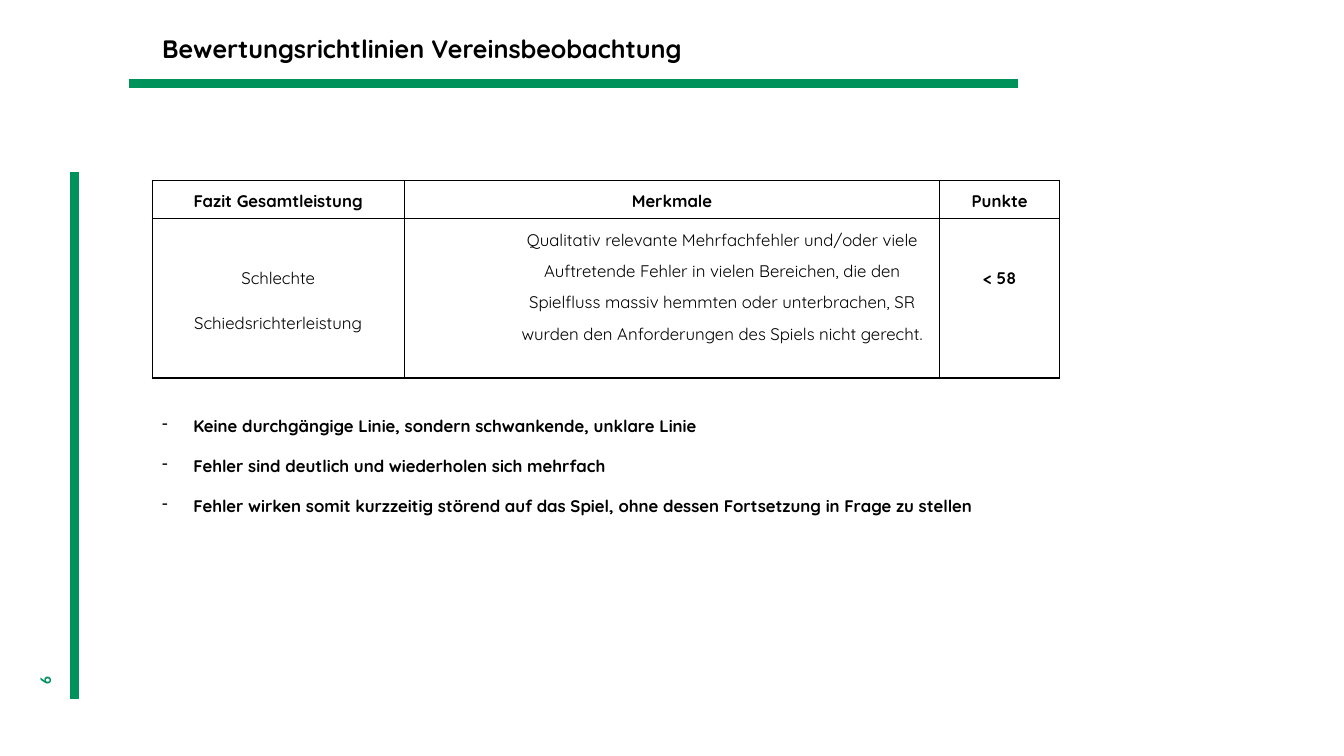
from lxml import etree
from pptx import Presentation
from pptx.dml.color import RGBColor
from pptx.enum.shapes import MSO_CONNECTOR
from pptx.enum.text import MSO_ANCHOR, PP_ALIGN
from pptx.oxml.ns import qn
from pptx.util import Inches, Pt

STRAIGHT = MSO_CONNECTOR.STRAIGHT
TOP, MIDDLE = MSO_ANCHOR.TOP, MSO_ANCHOR.MIDDLE
LEFT, CENTER, RIGHT = PP_ALIGN.LEFT, PP_ALIGN.CENTER, PP_ALIGN.RIGHT
COLORS = {"green": "00925B", "black": "000000"}


class GuidelineSlide:
    """Holds the style and the current slide and draws its elements."""

    font = "Quicksand"

    def __init__(self, slide):
        self.slide = slide

    def style(self, paragraph, size=12, bold=True, color="black", font=None,
              align=LEFT, spacing=1.0):
        paragraph.alignment = align
        paragraph.line_spacing = spacing
        paragraph.font.name = font or self.font
        paragraph.font.size = Pt(size)
        paragraph.font.bold = bold
        paragraph.font.color.rgb = RGBColor.from_string(COLORS[color])

    def bar(self, x1, y1, x2, y2):
        bar = self.slide.shapes.add_connector(
            STRAIGHT, Inches(x1), Inches(y1), Inches(x2), Inches(y2))
        bar.line.color.rgb = RGBColor.from_string(COLORS["green"])
        bar.line.width = Pt(6)
        etree.SubElement(bar.element.spPr, qn("a:effectLst"))

    def text(self, lines, left, top, width, height, anchor=MIDDLE,
             rotation=0, bullet=None, **style):
        box = self.slide.shapes.add_textbox(
            Inches(left), Inches(top), Inches(width), Inches(height))
        box.rotation = rotation
        frame = box.text_frame
        frame.word_wrap = True
        frame.vertical_anchor = anchor
        frame.text = "\n".join(lines)
        for paragraph in frame.paragraphs:
            if bullet:
                properties = paragraph._p.get_or_add_pPr()
                properties.set("marL", str(Inches(0.31)))
                properties.set("indent", str(-Inches(0.31)))
                etree.SubElement(properties, qn("a:buChar"), char=bullet)
            self.style(paragraph, **style)

    def border(self, cell):
        properties = cell._tc.get_or_add_tcPr()
        for position, side in enumerate(("lnL", "lnR", "lnT", "lnB")):
            line = etree.Element(qn(f"a:{side}"), w=str(Pt(1)))
            fill = etree.SubElement(line, qn("a:solidFill"))
            etree.SubElement(fill, qn("a:srgbClr"), val=COLORS["black"])
            properties.insert(position, line)

    def cell(self, cell, text, bold, top=0, indent=0):
        cell.fill.background()
        self.border(cell)
        cell.margin_left = cell.margin_right = Inches(0.07)
        cell.margin_top, cell.margin_bottom = Inches(top), 0
        cell.vertical_anchor = TOP
        cell.text = text
        for paragraph in cell.text_frame.paragraphs:
            if indent:
                properties = paragraph._p.get_or_add_pPr()
                properties.set("marL", str(Inches(indent)))
                properties.set("indent", "0")
            paragraph.space_after = Pt(10)
            self.style(paragraph, bold=bold, align=CENTER, spacing=1.5)

    def table(self, left, top, widths, heights, rows):
        table = self.slide.shapes.add_table(
            len(heights), len(widths), Inches(left), Inches(top),
            Inches(sum(widths)), Inches(sum(heights))).table
        table.first_row = table.horz_banding = False
        for column, width in zip(table.columns, widths):
            column.width = Inches(width)
        for row, height, contents in zip(table.rows, heights, rows):
            row.height = Inches(height)
            for cell, content in zip(row.cells, contents):
                self.cell(cell, **content)


def main():
    presentation = Presentation()
    presentation.slide_width = Inches(13.33)
    presentation.slide_height = Inches(7.5)
    page = GuidelineSlide(
        presentation.slides.add_slide(presentation.slide_layouts[6]))

    page.bar(0.74, 1.71, 0.74, 6.93)
    page.bar(10.1, 0.83, 1.28, 0.83)
    page.text(["6"], 0.2, 6.66, 0.49, 0.4, rotation=270, size=11,
              color="green", font="Calibri", align=RIGHT)
    page.text(
        ["Keine durchgängige Linie, sondern schwankende, unklare Linie",
         "Fehler sind deutlich und wiederholen sich mehrfach",
         "Fehler wirken somit kurzzeitig störend auf das Spiel, "
         "ohne dessen Fortsetzung in Frage zu stellen"],
        1.51, 3.87, 10.06, 1.92, anchor=TOP, bullet="-", spacing=2.0)
    page.text(["Bewertungsrichtlinien Vereinsbeobachtung"],
              1.51, 0.3, 8.66, 0.39, size=18, spacing=0.9)

    headings = [{"text": heading, "bold": True}
                for heading in ("Fazit Gesamtleistung", "Merkmale", "Punkte")]
    rating = [
        {"text": "Schlechte\nSchiedsrichterleistung", "bold": False,
         "top": 0.38},
        {"text": "Qualitativ relevante Mehrfachfehler und/oder viele "
                 "Auftretende Fehler in vielen Bereichen, die den Spielfluss "
                 "massiv hemmten oder unterbrachen, SR wurden den "
                 "Anforderungen des Spiels nicht gerecht.",
         "bold": False, "indent": 1},
        {"text": "< 58", "bold": True, "top": 0.38},
    ]
    page.table(1.51, 1.79, (2.5, 5.31, 1.19), (0.38, 1.58),
               (headings, rating))
    presentation.save("out.pptx")


if __name__ == "__main__":
    main()
